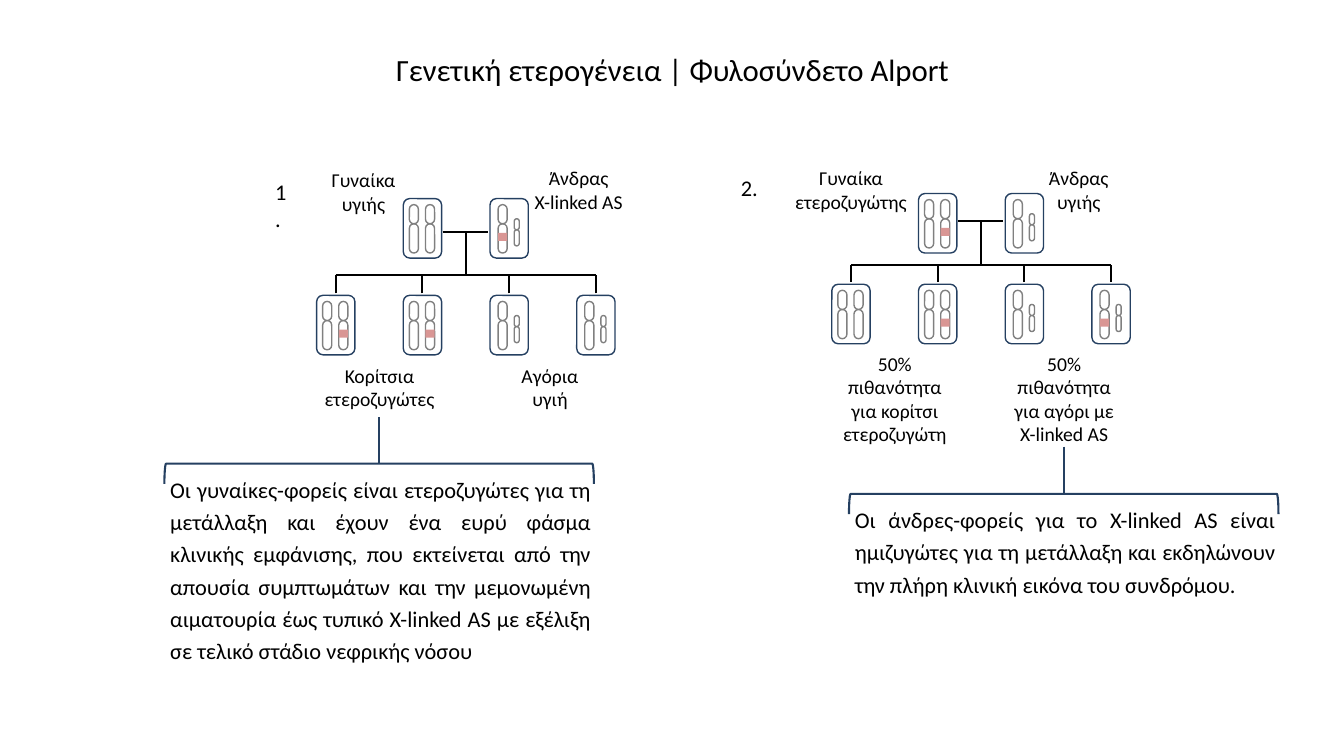
from dataclasses import dataclass

from lxml import etree
from pptx import Presentation
from pptx.dml.color import RGBColor
from pptx.enum import shapes, text
from pptx.oxml import ns
from pptx.util import Inches, Pt

COLORS = {"ink": "000000", "white": "FFFFFF", "navy": "254061",
          "outline": "808080", "mutation": "D99694"}
FONT = "Calibri"
PITCH = 0.86  # distance between neighbouring people
CELL_W, CELL_H = 0.38, 0.59
ROUND, RECT = shapes.MSO_SHAPE.ROUNDED_RECTANGLE, shapes.MSO_SHAPE.RECTANGLE
LEFT, CENTER, JUSTIFY = (text.PP_ALIGN.LEFT, text.PP_ALIGN.CENTER,
                         text.PP_ALIGN.JUSTIFY)


@dataclass
class Chromosome:
    dx: float
    w: float
    top: float
    short_arm: float
    long_arm: float
    mutated: bool = False


@dataclass
class Person:
    male: bool
    mutated: bool = False


@dataclass
class Label:
    words: str
    x: float
    y: float
    w: float
    h: float = 0.57
    size: int = 14
    align: text.PP_ALIGN = CENTER


@dataclass
class Pedigree:
    x: float
    parents_y: float
    couple_y: float
    siblings_y: float
    children_y: float
    parents: list[Person]
    children: list[Person]
    labels: list[Label]


@dataclass
class Note:
    words: str
    x: float
    stem_top: float
    bracket_y: float
    h: float


WOMAN, CARRIER = Person(False), Person(False, True)
MAN, AFFECTED = Person(True), Person(True, True)

PEDIGREES = [
    Pedigree(3.14, 1.97, 2.30, 2.73, 2.93, [WOMAN, AFFECTED],
             [CARRIER, CARRIER, MAN, MAN], [
        Label("1.", 2.63, 1.72, 0.36, 0.37, 16, LEFT),
        Label("Γυναίκα υγιής", 3.14, 1.62, 0.93),
        Label("Άνδρας\nX-linked AS", 5.15, 1.6, 1.18),
        Label("Κορίτσια ετεροζυγώτες", 3.06, 3.56, 1.41),
        Label("Αγόρια υγιή", 4.89, 3.56, 1.13)]),
    Pedigree(8.25, 1.92, 2.19, 2.63, 2.82, [CARRIER, MAN],
             [WOMAN, CARRIER, MAN, AFFECTED], [
        Label("2.", 7.25, 1.68, 0.38, 0.37, 16, LEFT),
        Label("Γυναίκα ετεροζυγώτης", 7.73, 1.6, 1.42),
        Label("Άνδρας\nυγιής", 10.11, 1.6, 1.18),
        Label("50% πιθανότητα για κορίτσι ετεροζυγώτη", 8.2, 3.44, 1.35, 1.04),
        Label("50% πιθανότητα για αγόρι με X-linked AS", 9.92, 3.44, 1.27, 1.04)]),
]

NOTES = [
    Note("Οι γυναίκες-φορείς είναι ετεροζυγώτες για τη μετάλλαξη και έχουν ένα "
         "ευρύ φάσμα κλινικής εμφάνισης, που εκτείνεται από την απουσία "
         "συμπτωμάτων και την μεμονωμένη αιματουρία έως τυπικό X-linked AS με "
         "εξέλιξη σε τελικό στάδιο νεφρικής νόσου", 1.59, 4.14, 4.6, 2.04),
    Note("Οι άνδρες-φορείς για το X-linked AS είναι ημιζυγώτες για τη μετάλλαξη "
         "και εκδηλώνουν την πλήρη κλινική εικόνα του συνδρόμου.",
         8.38, 4.43, 4.9, 1.05),
]


def rgb(name: str) -> RGBColor:
    return RGBColor.from_string(COLORS[name])


def add_text(tree, words: str, x: float, y: float, w: float, h: float, *,
             size: int = 14, align=CENTER, spacing: float = 1.0,
             anchor=text.MSO_ANCHOR.TOP) -> None:
    tf = tree.add_textbox(Inches(x), Inches(y), Inches(w), Inches(h)).text_frame
    tf.word_wrap = True
    tf.vertical_anchor = anchor
    for i, line in enumerate(words.split("\n")):
        p = tf.add_paragraph() if i else tf.paragraphs[0]
        p.alignment, p.line_spacing = align, spacing
        r = p.add_run()
        r.text = line
        r.font.name, r.font.size = FONT, Pt(size)
        r.font.color.rgb = rgb("ink")


def add_shape(tree, kind, x: float, y: float, w: float, h: float, *,
              fill: str | None = None, line: str | None = None,
              width: float = 1, adj: float | None = None):
    sp = tree.add_shape(kind, Inches(x), Inches(y), Inches(w), Inches(h))
    sp.shadow.inherit = False
    if fill:
        sp.fill.solid()
        sp.fill.fore_color.rgb = rgb(fill)
    else:
        sp.fill.background()
    if line:
        sp.line.color.rgb, sp.line.width = rgb(line), Pt(width)
    else:
        sp.line.fill.background()
    if adj is not None:
        sp.adjustments[0] = adj
    return sp


def add_line(tree, x1: float, y1: float, x2: float, y2: float,
             color: str = "ink") -> None:
    cx = tree.add_connector(shapes.MSO_CONNECTOR.STRAIGHT, Inches(x1),
                            Inches(y1), Inches(x2), Inches(y2))
    cx.line.color.rgb, cx.line.width = rgb(color), Pt(1.5)
    etree.SubElement(cx._element.spPr, ns.qn("a:effectLst"))


def add_person(tree, person: Person, x: float, y: float) -> None:
    group = tree.add_group_shape().shapes
    add_shape(group, ROUND, x, y, CELL_W, CELL_H, line="navy")
    if person.male:
        pair = [Chromosome(0.08, 0.09, 0.06, 0.19, 0.29, person.mutated),
                Chromosome(0.24, 0.05, 0.2, 0.11, 0.16)]
    else:
        pair = [Chromosome(0.06, 0.09, 0.06, 0.19, 0.29),
                Chromosome(0.22, 0.09, 0.06, 0.19, 0.29, person.mutated)]
    for c in pair:
        top = y + c.top
        for arm_y, arm_h in ((top + c.short_arm, c.long_arm), (top, c.short_arm)):
            add_shape(group, ROUND, x + c.dx, arm_y, c.w, arm_h,
                      fill="white", line="outline", adj=0.5)
        if c.mutated:
            add_shape(group, RECT, x + c.dx, y + 0.34, c.w, 0.08, fill="mutation")


def add_pedigree(tree, ped: Pedigree) -> None:
    for i, parent in enumerate(ped.parents, start=1):
        add_person(tree, parent, ped.x + i * PITCH, ped.parents_y)
    centers = [ped.x + CELL_W / 2 + i * PITCH for i in range(len(ped.children))]
    for child, center in zip(ped.children, centers):
        add_person(tree, child, center - CELL_W / 2, ped.children_y)
        add_line(tree, center, ped.children_y - 0.02, center, ped.siblings_y)
    middle = (centers[0] + centers[-1]) / 2
    add_line(tree, middle - 0.23, ped.couple_y, middle + 0.22, ped.couple_y)
    add_line(tree, middle, ped.couple_y, middle, ped.siblings_y)
    add_line(tree, centers[0], ped.siblings_y, centers[-1], ped.siblings_y)
    for lb in ped.labels:
        add_text(tree, lb.words, lb.x, lb.y, lb.w, lb.h, size=lb.size, align=lb.align)


def add_note(tree, note: Note) -> None:
    depth, span = 0.2, 4.26
    middle = note.x + 2.17
    # The bracket is turned a quarter, so its frame is upright before rotation
    sp = add_shape(tree, shapes.MSO_SHAPE.LEFT_BRACKET, middle - depth / 2,
                   note.bracket_y + depth / 2 - span / 2, depth, span,
                   line="navy", width=1.5)
    sp.rotation = 90
    add_line(tree, middle, note.stem_top, middle, note.bracket_y, "navy")
    add_text(tree, note.words, note.x, note.bracket_y + 0.02, 4.37, note.h,
             size=16, align=JUSTIFY, spacing=1.2)


def main() -> None:
    prs = Presentation()
    prs.slide_width, prs.slide_height = Inches(13.33), Inches(7.5)
    tree = prs.slides.add_slide(prs.slide_layouts[6]).shapes
    # Title
    add_text(tree, "Γενετική ετερογένεια | Φυλοσύνδετο Alport", 1.67, 0.45, 10,
             0.47, size=22, anchor=text.MSO_ANCHOR.MIDDLE)
    # Family trees
    for ped in PEDIGREES:
        add_pedigree(tree, ped)
    # Explanations under the trees
    for note in NOTES:
        add_note(tree, note)
    prs.save("out.pptx")


if __name__ == "__main__":
    main()
